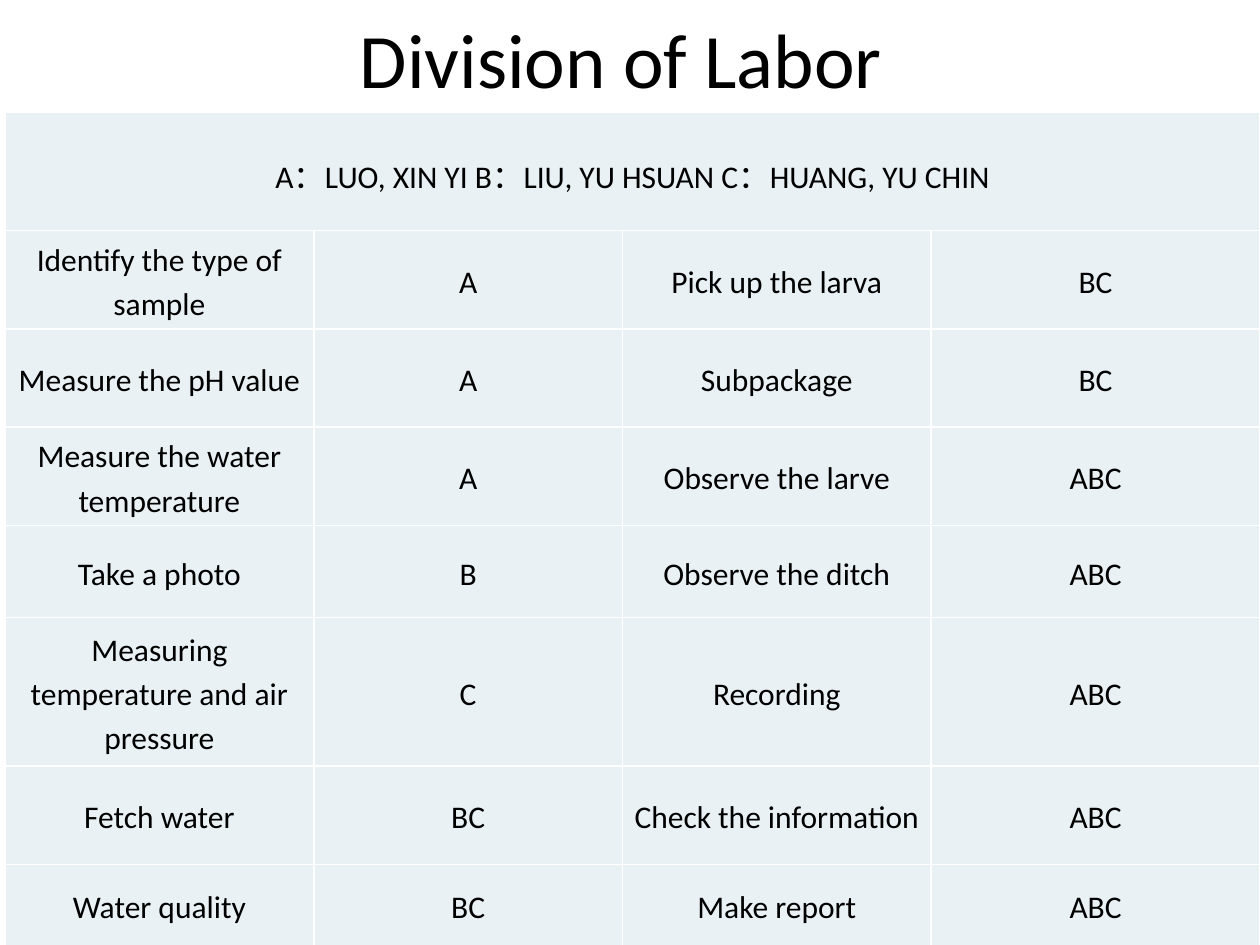
from lxml.etree import SubElement
from pptx import Presentation
from pptx.dml.color import RGBColor as Rgb
from pptx.enum.text import MSO_ANCHOR as Anchor, PP_ALIGN as Align
from pptx.oxml.ns import qn
from pptx.util import Inches, Pt

TITLE = "Division of Labor"
MEMBERS = "A：LUO, XIN YI B：LIU, YU HSUAN C：HUANG, YU CHIN"
DUTIES = [
    ("Identify the type of sample", "A", "Pick up the larva", "BC"),
    ("Measure the pH value", "A", "Subpackage", "BC"),
    ("Measure the water temperature", "A", "Observe the larve", "ABC"),
    ("Take a photo", "B", "Observe the ditch", "ABC"),
    ("Measuring temperature and air pressure", "C", "Recording", "ABC"),
    ("Fetch water", "BC", "Check the information", "ABC"),
    ("Water quality", "BC", "Make report", "ABC"),
]
COLORS = {"text": "000000", "cell": "E9F1F5", "border": "FFFFFF"}
FONT = "Calibri"
WIDTH, HEIGHT = 10, 7.5
TABLE_LEFT, TABLE_TOP = 0.04, 0.89
COLUMN_WIDTHS = [2.45, 2.45, 2.45, 2.61]
ROW_HEIGHTS = [0.94, 0.78, 0.78, 0.78, 0.73, 1.18, 0.78, 0.65]


def write(frame, text, size, spacing=None):
    paragraph = frame.paragraphs[0]
    paragraph.alignment = Align.CENTER
    paragraph.line_spacing = spacing
    run = paragraph.add_run()
    run.text = text
    run.font.name = FONT
    run.font.size = Pt(size)
    run.font.color.rgb = Rgb.from_string(COLORS["text"])


def add_borders(cell):
    properties = cell._tc.get_or_add_tcPr()
    for side in ("lnL", "lnR", "lnT", "lnB"):
        line = SubElement(properties, qn(f"a:{side}"), w=str(Pt(1)))
        fill = SubElement(line, qn("a:solidFill"))
        SubElement(fill, qn("a:srgbClr"), val=COLORS["border"])


def format_cell(cell, side_margin):
    add_borders(cell)
    cell.fill.solid()
    cell.fill.fore_color.rgb = Rgb.from_string(COLORS["cell"])
    cell.vertical_anchor = Anchor.MIDDLE
    cell.margin_left = cell.margin_right = Inches(side_margin)
    cell.margin_top = cell.margin_bottom = 0


def add_title(slide):
    title = slide.shapes.title
    title.left, title.top = Inches(0.43), 0
    title.width, title.height = Inches(9), Inches(0.92)
    title.text_frame.vertical_anchor = Anchor.MIDDLE
    write(title.text_frame, TITLE, 44)


def add_duties(slide):
    rows = [(MEMBERS, "", "", "")] + DUTIES
    table = slide.shapes.add_table(
        len(rows), len(COLUMN_WIDTHS), Inches(TABLE_LEFT), Inches(TABLE_TOP),
        Inches(sum(COLUMN_WIDTHS)), Inches(sum(ROW_HEIGHTS))).table
    for column, width in zip(table.columns, COLUMN_WIDTHS):
        column.width = Inches(width)
    for row, height in zip(table.rows, ROW_HEIGHTS):
        row.height = Inches(height)
    table.cell(0, 0).merge(table.cell(0, len(COLUMN_WIDTHS) - 1))
    for r, texts in enumerate(rows):
        for c, text in enumerate(texts):
            cell = table.cell(r, c)
            format_cell(cell, 0.07 if r else 0.02)
            if text:
                write(cell.text_frame, text, 18, 1.15)


def main():
    deck = Presentation()
    deck.slide_width, deck.slide_height = Inches(WIDTH), Inches(HEIGHT)
    slide = deck.slides.add_slide(deck.slide_layouts[5])
    add_title(slide)
    add_duties(slide)
    deck.save("out.pptx")


if __name__ == "__main__":
    main()
